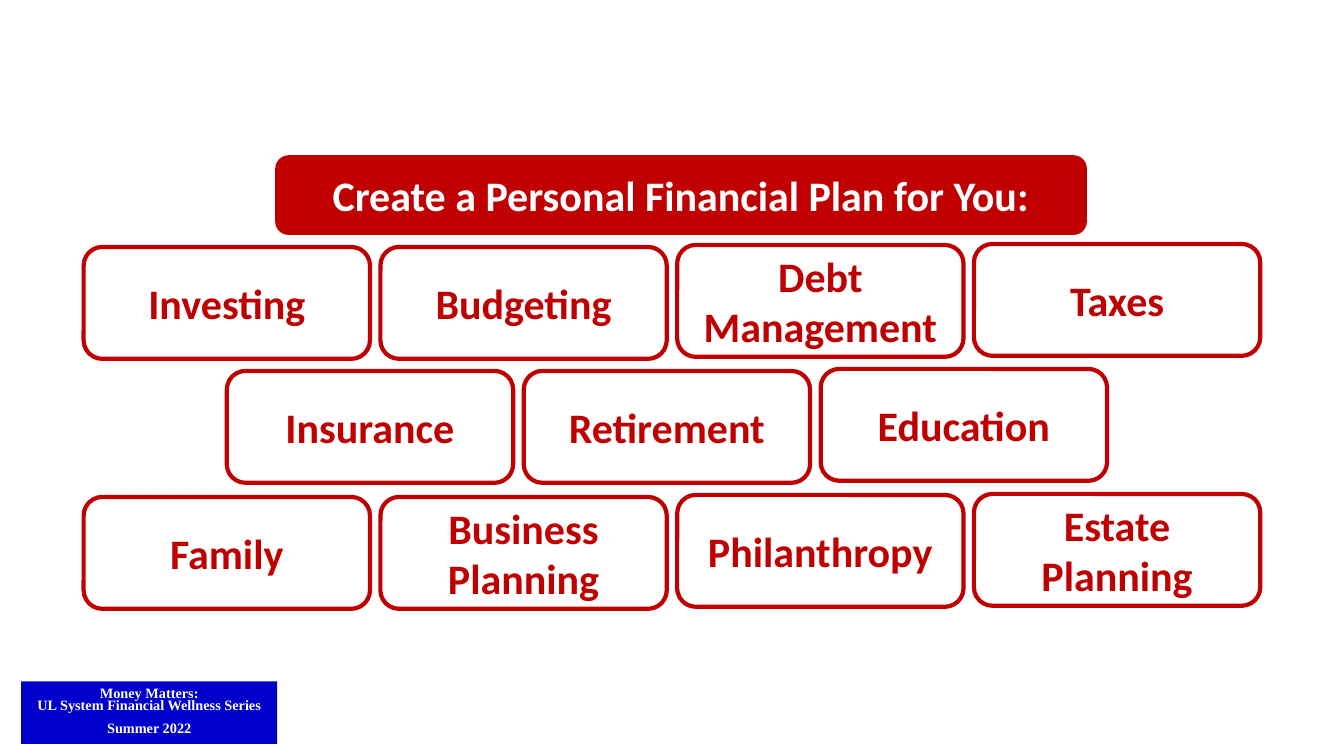
import pptx
import pptx.util
import pptx.dml.color
import pptx.enum.shapes
import pptx.enum.text

Inches = pptx.util.Inches
Pt = pptx.util.Pt
SHAPES = pptx.enum.shapes.MSO_SHAPE

RED, WHITE, BLUE = "C00000", "FFFFFF", "0000CC"
TOPIC_WIDTH, TOPIC_HEIGHT = 2.84, 1.11
COLUMN_RISE = (0, 0, 0.02, 0.03)  # right-hand columns sit slightly higher

# left, top, total width of each row, then its topics
TOPIC_ROWS = [
    (0.83, 2.45, 11.67, ["Investing", "Budgeting", "Debt Management", "Taxes"]),
    (2.25, 3.68, 8.73, ["Insurance", "Retirement", "Education"]),
    (0.83, 4.93, 11.67,
     ["Family", "Business Planning", "Philanthropy", "Estate Planning"]),
]
HEADING_FONT = {"name": "Calibri", "size": Pt(30), "bold": True}
FOOTER_FONT = {"name": "Times New Roman", "size": Pt(10.2), "bold": True}


def rgb(hex_colour):
    return pptx.dml.color.RGBColor.from_string(hex_colour)


def add_panel(slide, box, outline, fill, lines, font_format, text_colour, border=None):
    """Draw a filled shape with centred lines of text; return its paragraphs."""
    panel = slide.shapes.add_shape(outline, *[Inches(length) for length in box])
    panel.shadow.inherit = False
    panel.fill.solid()
    panel.fill.fore_color.rgb = rgb(fill)
    if border:
        panel.line.color.rgb = rgb(border)
        panel.line.width = Pt(3)
    else:
        panel.line.fill.background()

    frame = panel.text_frame
    frame.word_wrap = True
    frame.vertical_anchor = pptx.enum.text.MSO_ANCHOR.MIDDLE
    frame.text = "\n".join(lines)
    for paragraph in frame.paragraphs:
        paragraph.alignment = pptx.enum.text.PP_ALIGN.CENTER
        for run in paragraph.runs:
            for attribute, value in font_format.items():
                setattr(run.font, attribute, value)
            run.font.color.rgb = rgb(text_colour)
    return frame.paragraphs


def add_footer(slide, box):
    lines = ["Money Matters:", "UL System Financial Wellness Series", "Summer 2022"]
    paragraphs = add_panel(slide, box, SHAPES.RECTANGLE, BLUE, lines,
                           FOOTER_FONT, WHITE)
    for paragraph in paragraphs:
        paragraph.line_spacing = 0.7
    paragraphs[-1].space_before = Pt(8.2)


def add_heading(slide, box):
    add_panel(slide, box, SHAPES.ROUNDED_RECTANGLE, RED,
              ["Create a Personal Financial Plan for You:"], HEADING_FONT, WHITE)


def add_topic_row(slide, left, top, width, topics):
    pitch = (width - TOPIC_WIDTH) / (len(topics) - 1)
    for column, topic in enumerate(topics):
        box = (left + column * pitch, top - COLUMN_RISE[column],
               TOPIC_WIDTH, TOPIC_HEIGHT)
        add_panel(slide, box, SHAPES.ROUNDED_RECTANGLE, WHITE, [topic],
                  HEADING_FONT, RED, border=RED)


def main():
    presentation = pptx.Presentation()
    presentation.slide_width = Inches(13.33)
    presentation.slide_height = Inches(7.5)
    slide = presentation.slides.add_slide(presentation.slide_layouts[6])

    # Series label at the bottom left
    add_footer(slide, (0.21, 6.76, 2.54, 0.62))
    # Heading and the rows of topics below it
    add_heading(slide, (2.73, 1.54, 8.05, 0.79))
    for row in TOPIC_ROWS:
        add_topic_row(slide, *row)

    presentation.save("out.pptx")


if __name__ == "__main__":
    main()
